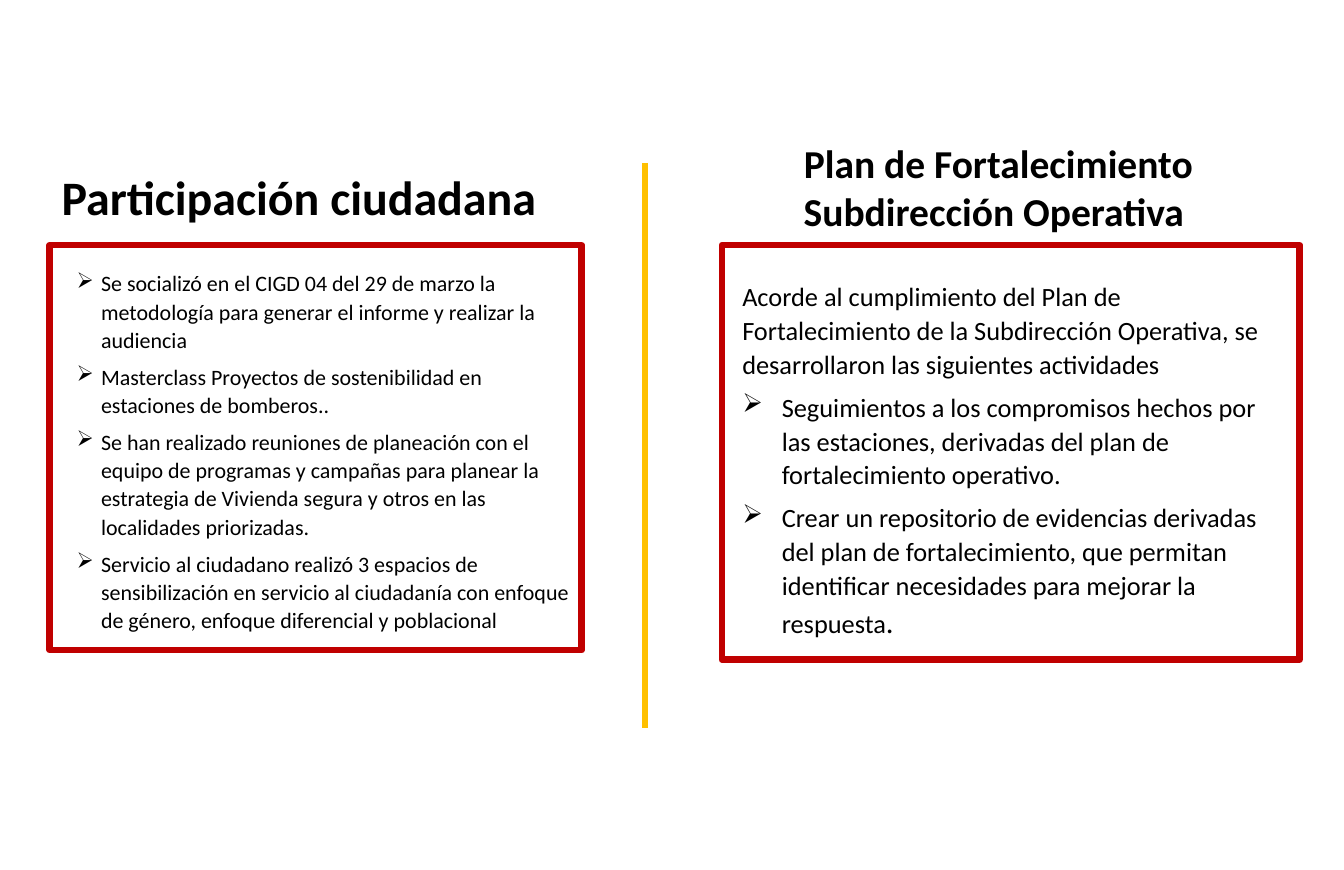
from lxml.etree import SubElement
from pptx import Presentation
from pptx.dml.color import RGBColor
from pptx.enum.shapes import MSO_CONNECTOR, MSO_SHAPE
from pptx.enum.text import PP_ALIGN
from pptx.oxml.ns import qn
from pptx.util import Inches, Pt


def color(value):
    return RGBColor.from_string(value)


class Page:
    font, ink, frame_color, divider_color = "Calibri", "000000", "C00000", "FFC000"
    line_width = Pt(6)

    def __init__(self, prs):
        self.s = prs.slides.add_slide(prs.slide_layouts[6])

    def style(self, r, size, bold=False):
        r.font.name, r.font.size, r.font.bold = self.font, Pt(size), bold
        r.font.color.rgb = color(self.ink)

    def text_box(self, box):
        tf = self.s.shapes.add_textbox(*map(Inches, box)).text_frame
        tf.word_wrap = True
        return tf

    def heading(self, box, lines, size):
        tf = self.text_box(box)
        tf.margin_left = tf.margin_right = Inches(0.12)
        tf.margin_top = tf.margin_bottom = Inches(0.06)
        tf.text = "\n".join(lines)
        for p in tf.paragraphs:
            p.alignment = PP_ALIGN.CENTER
            self.style(p.runs[0], size, bold=True)

    def frame(self, box):
        sp = self.s.shapes.add_shape(MSO_SHAPE.RECTANGLE, *map(Inches, box))
        sp.shadow.inherit = False
        sp.fill.background()
        sp.line.color.rgb = color(self.frame_color)
        sp.line.width = self.line_width

    def divider(self, x, top, bottom):
        sp = self.s.shapes.add_connector(
            MSO_CONNECTOR.STRAIGHT, Inches(x), Inches(top), Inches(x), Inches(bottom))
        sp.line.color.rgb = color(self.divider_color)
        sp.line.width = self.line_width
        SubElement(sp._element.spPr, qn("a:effectLst"))

    def bullet(self, p, indent):
        pPr = p._p.get_or_add_pPr()
        pPr.set("marL", str(Inches(indent)))
        pPr.set("indent", str(-Inches(indent)))
        SubElement(pPr, qn("a:buChar"), char="➢")

    def body(self, box, items, size, indent, intro=None):
        tf = self.text_box(box)
        tf.text = "\n".join(([intro] if intro else []) + items)
        for i, p in enumerate(tf.paragraphs):
            if i or not intro:
                self.bullet(p, indent)
            p.line_spacing = 1.07
            p.space_after = Pt(8)
            self.style(p.runs[0], size)
        return tf


def main():
    prs = Presentation()
    prs.slide_width, prs.slide_height = Inches(17), Inches(11)
    page = Page(prs)

    # Left column: citizen participation
    page.heading((0.57, 2.06, 6.56, 0.86), ["Participación ciudadana "], 43.7)
    page.frame((0.63, 3.1, 6.73, 5.12))
    page.body((0.87, 3.34, 6.56, 4.74), [
        "Se socializó en el CIGD 04 del 29 de marzo la metodología para generar "
        "el informe y realizar la audiencia",
        "Masterclass Proyectos de sostenibilidad en estaciones de bomberos..",
        "Se han realizado reuniones de planeación con el equipo de programas y "
        "campañas para planear la estrategia de Vivienda segura y otros en las "
        "localidades priorizadas.",
        "Servicio al ciudadano realizó 3 espacios de sensibilización en servicio al "
        "ciudadanía con enfoque de género, enfoque diferencial y poblacional",
    ], 20, 0.31)

    # Line between the columns
    page.divider(8.16, 2.06, 9.2)

    # Right column: strengthening plan
    page.heading((8.83, 1.7, 7.6, 1.33),
                 ["Plan de Fortalecimiento", "Subdirección Operativa "], 36)
    page.frame((9.13, 3.1, 7.31, 5.24))
    tf = page.body((9.29, 3.47, 6.99, 4.7), [
        "Seguimientos a los compromisos hechos por las estaciones, derivadas del "
        "plan de fortalecimiento operativo.",
        "Crear un repositorio de evidencias derivadas del plan de fortalecimiento, "
        "que permitan identificar necesidades para mejorar la respuesta",
    ], 24, 0.5, intro="Acorde al cumplimiento del Plan de Fortalecimiento de la "
        "Subdirección Operativa, se desarrollaron las siguientes actividades")

    # Larger closing full stop
    r = tf.paragraphs[-1].add_run()
    r.text = "."
    page.style(r, 28)

    prs.save("out.pptx")


if __name__ == "__main__":
    main()
